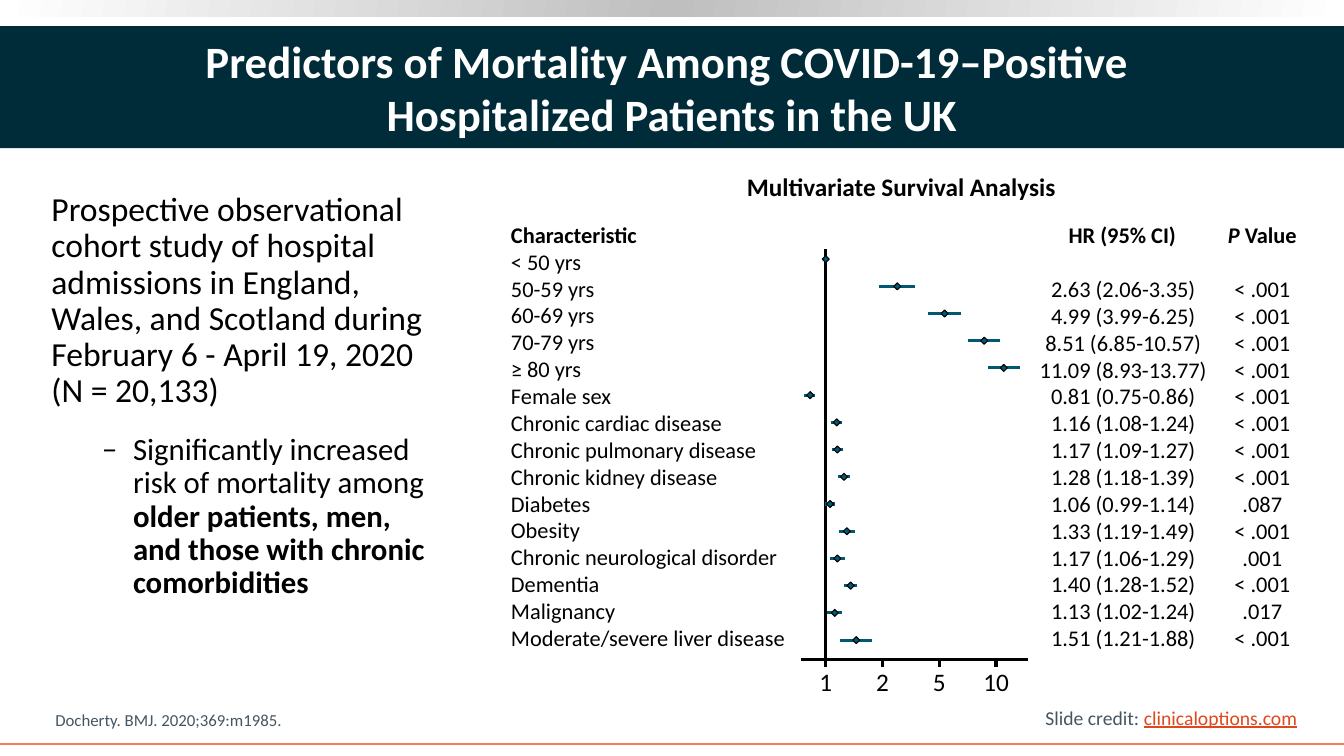
import copy
import math

import lxml.etree
import pptx
import pptx.dml.color
import pptx.enum.shapes
import pptx.enum.text
import pptx.oxml.ns
import pptx.util

Inches, Pt = pptx.util.Inches, pptx.util.Pt
qn = pptx.oxml.ns.qn
ALIGN = pptx.enum.text.PP_ALIGN
ANCHOR = pptx.enum.text.MSO_ANCHOR
FIT = pptx.enum.text.MSO_AUTO_SIZE
RECT = pptx.enum.shapes.MSO_SHAPE.RECTANGLE
STRAIGHT = pptx.enum.shapes.MSO_CONNECTOR.STRAIGHT

FONT = "Calibri"
BLACK, WHITE, NAVY, TEAL = "000000", "FFFFFF", "002C3A", "015873"
SLATE, RED, ORANGE, SILVER = "455560", "E1471D", "F47D55", "BFBFBF"

# characteristic, hazard ratio, 95% CI low, 95% CI high, P value
REFERENCE_GROUP = "< 50 yrs"
PREDICTORS = [
    ("50-59 yrs", 2.63, 2.06, 3.35, "< .001"),
    ("60-69 yrs", 4.99, 3.99, 6.25, "< .001"),
    ("70-79 yrs", 8.51, 6.85, 10.57, "< .001"),
    ("≥ 80 yrs", 11.09, 8.93, 13.77, "< .001"),
    ("Female sex", 0.81, 0.75, 0.86, "< .001"),
    ("Chronic cardiac disease", 1.16, 1.08, 1.24, "< .001"),
    ("Chronic pulmonary disease", 1.17, 1.09, 1.27, "< .001"),
    ("Chronic kidney disease", 1.28, 1.18, 1.39, "< .001"),
    ("Diabetes", 1.06, 0.99, 1.14, ".087"),
    ("Obesity", 1.33, 1.19, 1.49, "< .001"),
    ("Chronic neurological disorder", 1.17, 1.06, 1.29, ".001"),
    ("Dementia", 1.40, 1.28, 1.52, "< .001"),
    ("Malignancy", 1.13, 1.02, 1.24, ".017"),
    ("Moderate/severe liver disease", 1.51, 1.21, 1.88, "< .001"),
]


def rgb(value):
    return pptx.dml.color.RGBColor.from_string(value)


def place(s, x, y, w, h):
    s.left, s.top, s.width, s.height = (Inches(v) for v in (x, y, w, h))


def add_run(p, text, size, color=BLACK, bold=False, italic=False, underline=False):
    r = p.add_run()
    r.text = text
    f = r.font
    f.name, f.size, f.color.rgb = FONT, Pt(size), rgb(color)
    f.bold, f.italic, f.underline = bold, italic, underline
    return r


def add_text(slide, x, y, w, h, lines, align=ALIGN.LEFT, wrap=False, anchor=ANCHOR.TOP):
    """Add a text box; each line is a list of argument tuples for add_run."""
    s = slide.shapes.add_textbox(Inches(x), Inches(y), Inches(w), Inches(h))
    tf = s.text_frame
    tf.word_wrap, tf.auto_size, tf.vertical_anchor = wrap, FIT.SHAPE_TO_FIT_TEXT, anchor
    for i, runs in enumerate(lines):
        p = tf.paragraphs[0] if i == 0 else tf.add_paragraph()
        p.alignment = align
        for run in runs:
            add_run(p, *run)


def add_line(slide, x1, y1, x2, y2, color=BLACK, width=2.25):
    c = slide.shapes.add_connector(STRAIGHT, Inches(x1), Inches(y1), Inches(x2), Inches(y2))
    c.line.color.rgb, c.line.width = rgb(color), Pt(width)
    lxml.etree.SubElement(c._element.spPr, qn("a:effectLst"))


def add_rect(slide, x, y, w, h):
    s = slide.shapes.add_shape(RECT, Inches(x), Inches(y), Inches(w), Inches(h))
    s.shadow.inherit = False
    return s


def add_frame(slide, width, height):
    """Gradient strip along the top and thin rule along the bottom."""
    s = add_rect(slide, 0, 0, width, 0.16)
    s.line.fill.background()
    s.fill.gradient()
    s.fill.gradient_angle = 170
    stops = s._element.spPr.find(".//" + qn("a:gsLst"))
    stops.append(copy.deepcopy(stops[0]))
    for stop, position, color in zip(s.fill.gradient_stops, (0, 0.5, 1), (WHITE, SILVER, WHITE)):
        stop.position, stop.color.rgb = position, rgb(color)
    add_line(slide, 0, height - 0.12, width, height - 0.12, ORANGE, 1.5)


def fill_title(s, x, y, w, h):
    place(s, x, y, w, h)
    s.fill.solid()
    s.fill.fore_color.rgb = rgb(NAVY)
    tf = s.text_frame
    tf.auto_size, tf.vertical_anchor = FIT.NONE, ANCHOR.MIDDLE
    p = tf.paragraphs[0]
    p.alignment = ALIGN.CENTER
    add_run(p, "Predictors of Mortality Among COVID-19–Positive ", 32, WHITE, True)
    p.add_line_break()
    add_run(p, "Hospitalized Patients in the UK", 32, WHITE, True)


def set_bullet(p, margin, indent, char=None):
    pPr = p._p.get_or_add_pPr()
    pPr.set("marL", str(Inches(margin)))
    pPr.set("indent", str(Inches(indent)))
    if char is None:
        lxml.etree.SubElement(pPr, qn("a:buNone"))
        return
    color = lxml.etree.SubElement(pPr, qn("a:buClr"))
    lxml.etree.SubElement(color, qn("a:srgbClr")).set("val", BLACK)
    lxml.etree.SubElement(pPr, qn("a:buFont")).set("typeface", FONT)
    lxml.etree.SubElement(pPr, qn("a:buChar")).set("char", char)


def fill_body(s, x, y, w, h):
    place(s, x, y, w, h)
    tf = s.text_frame
    tf.auto_size, tf.vertical_anchor = FIT.NONE, ANCHOR.TOP
    study, finding = tf.paragraphs[0], tf.add_paragraph()
    finding.level = 1
    for p, before in ((study, 0), (finding, 10)):
        p.alignment, p.line_spacing = ALIGN.LEFT, 0.9
        p.space_before, p.space_after = Pt(before), Pt(7)
    set_bullet(study, 0, 0)
    set_bullet(finding, 0.81, -0.31, "‒")
    add_run(study, "Prospective observational cohort study of hospital admissions in England, "
                   "Wales, and Scotland during February 6 - April 19, 2020 (N = 20,133)", 24)
    add_run(finding, "Significantly increased risk of mortality among ", 22)
    add_run(finding, "older patients, men, and those with chronic comorbidities", 22, bold=True)


def add_survival_table(slide, x, y):
    """Headings and text columns on either side of the forest plot."""
    add_text(slide, x + 2.34, y, 3.31, 0.4, [[("Multivariate Survival Analysis", 18, BLACK, True)]])
    headings = [
        (0, 1.47, [("Characteristic", 16, BLACK, True)]),
        (5.53, 1.28, [("HR (95% CI)", 16, BLACK, True)]),
        (7.11, 0.89, [("P ", 16, BLACK, True, True), ("Value", 16, BLACK, True)]),
    ]
    for dx, w, runs in headings:
        add_text(slide, x + dx, y + 0.49, w, 0.37, [runs])

    names = [REFERENCE_GROUP] + [row[0] for row in PREDICTORS]
    ratios = [f"{hr:.2f} ({low:.2f}-{high:.2f})" for _, hr, low, high, _ in PREDICTORS]
    p_values = [row[4] for row in PREDICTORS]
    columns = [
        (0, 0.76, 2.97, 4.14, names, ALIGN.LEFT),
        (5.23, 1.03, 1.88, 3.87, ratios, ALIGN.CENTER),
        (7.17, 1.03, 0.76, 3.87, p_values, ALIGN.CENTER),
    ]
    for dx, dy, w, h, texts, align in columns:
        add_text(slide, x + dx, y + dy, w, h, [[(text, 16)] for text in texts], align)


def add_forest_plot(slide, x, y, w, h):
    """Hazard ratios on a log scale, with the line of no effect at 1."""
    axis_y, one_x, decade, tick_gap = y + h, x + 0.25, 1.69, 0.563
    row_y, row_gap, marker = y + 0.1, 0.27, 0.05

    def ratio_x(value):
        return one_x + decade * math.log10(value)

    add_line(slide, x, axis_y, x + w, axis_y)
    add_line(slide, one_x, axis_y, one_x, y)
    for i, label in enumerate(("1", "2", "5", "10")):
        tick_x = one_x + i * tick_gap
        add_line(slide, tick_x, axis_y, tick_x, axis_y + 0.08)
        add_text(slide, tick_x - 0.31, axis_y + 0.02, 0.62, 0.4, [[(label, 18)]], ALIGN.CENTER, True)

    for i, (_, _, low, high, _) in enumerate(PREDICTORS, 1):
        mid_y = row_y + i * row_gap
        add_line(slide, ratio_x(low), mid_y, ratio_x(high), mid_y, TEAL)
    for i, ratio in enumerate([1] + [row[1] for row in PREDICTORS]):
        s = add_rect(slide, ratio_x(ratio) - marker / 2, row_y + i * row_gap - marker / 2,
                     marker, marker)
        s.rotation = 315
        s.fill.solid()
        s.fill.fore_color.rgb = rgb(TEAL)
        s.line.color.rgb, s.line.width = rgb(BLACK), Pt(0)


def add_footer(slide, x, y):
    add_text(slide, x, y + 0.04, 8.59, 0.3, [[("Docherty. BMJ. 2020;369:m1985.", 12, SLATE)]],
             wrap=True, anchor=ANCHOR.BOTTOM)
    add_text(slide, x + 9.82, y, 2.72, 0.34, [[
        ("Slide credit: ", 14, SLATE), ("clinicaloptions.com", 14, RED, False, False, True)]])


def main():
    width, height = 13.33, 7.5
    prs = pptx.Presentation()
    prs.slide_width, prs.slide_height = Inches(width), Inches(height)
    slide = prs.slides.add_slide(prs.slide_layouts[1])
    add_frame(slide, width, height)
    fill_title(slide.shapes.title, 0, 0.26, width, 1.21)
    fill_body(slide.placeholders[1], 0.41, 1.86, 4.11, 5.12)
    add_survival_table(slide, 4.97, 1.65)
    add_forest_plot(slide, 7.94, 2.47, 2.26, 4.07)
    add_footer(slide, 0.45, 6.95)
    prs.save("out.pptx")


if __name__ == "__main__":
    main()
